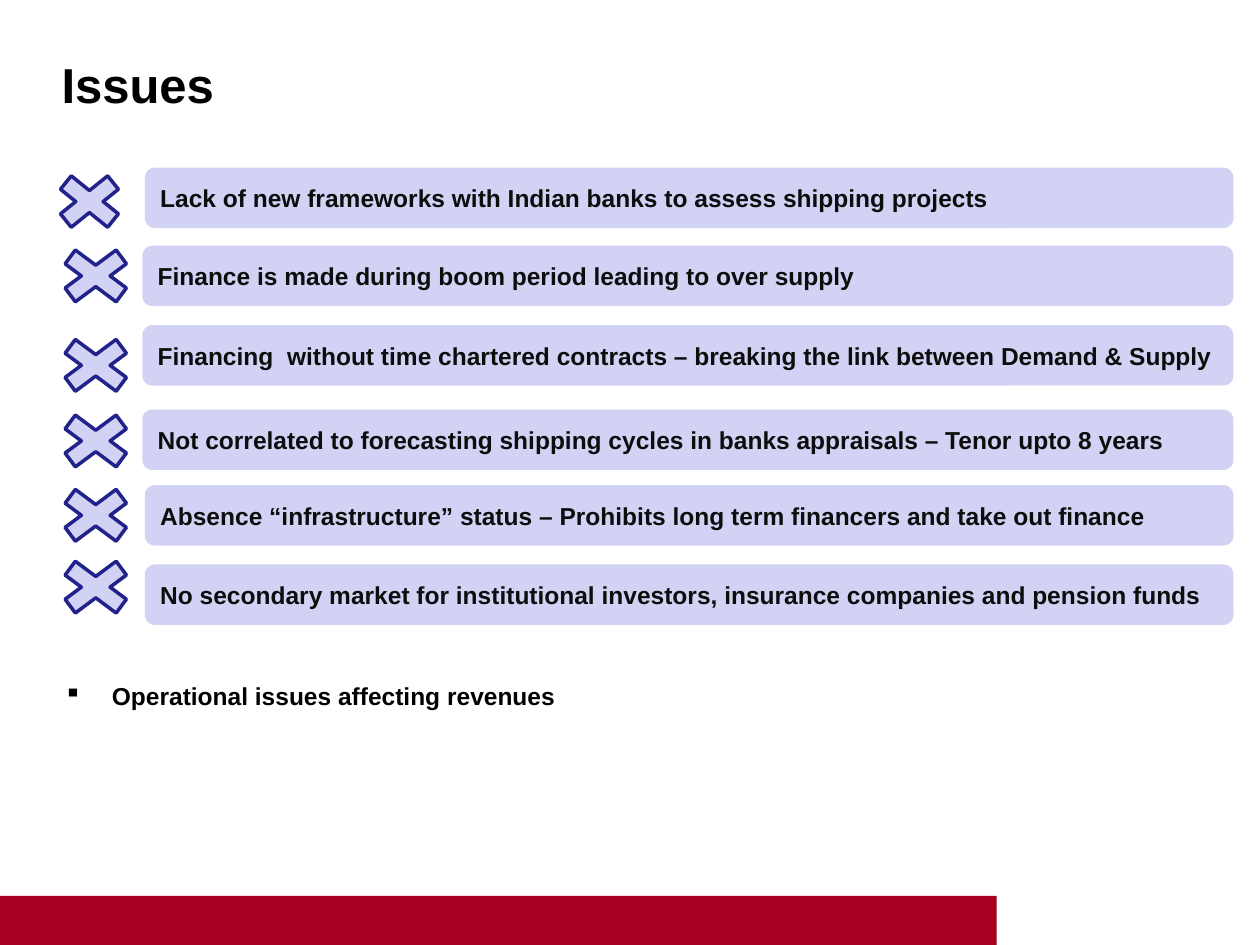
from lxml import etree
from pptx import Presentation
from pptx.dml.color import RGBColor
from pptx.enum.shapes import MSO_SHAPE as Kind
from pptx.enum.text import MSO_ANCHOR as Anchor, PP_ALIGN as Align
from pptx.oxml.ns import qn
from pptx.util import Inches, Pt

COLORS = {"band": "A50021", "bar": "D2D2F4", "edge": "22228B",
          "text": "0D0D0D", "black": "000000"}
TITLE = "Issues"
NOTE = "Operational issues affecting revenues"

# Text, bar left, bar top, cross top
ISSUES = [
    ("Lack of new frameworks with Indian banks to assess shipping projects",
     1.15, 1.33, 1.31),
    ("Finance is made during boom period leading to over supply",
     1.13, 1.95, 1.9),
    ("Financing  without time chartered contracts – breaking the link between Demand & Supply",
     1.13, 2.58, 2.61),
    ("Not correlated to forecasting shipping cycles in banks appraisals – Tenor upto 8 years",
     1.13, 3.25, 3.21),
    ("Absence “infrastructure” status – Prohibits long term financers and take out finance",
     1.15, 3.85, 3.8),
    ("No secondary market for institutional investors, insurance companies and pension funds",
     1.15, 4.48, 4.37),
]
RIGHT = 9.79  # shared right edge of the bars
BAR_H, CROSS_H = 0.48, 0.58


def color(name):
    return RGBColor.from_string(COLORS[name])


def add_shape(kind, box, fill, edge=None):
    shape = slide.shapes.add_shape(kind, *map(Inches, box))
    shape.shadow.inherit = False
    shape.fill.solid()
    shape.fill.fore_color.rgb = color(fill)
    if edge:
        shape.line.color.rgb = color(edge)
        shape.line.width = Pt(2)
    else:
        shape.line.fill.background()
    return shape


def write(shape, text, size, ink, anchor=Anchor.MIDDLE):
    frame = shape.text_frame
    frame.word_wrap = True
    frame.vertical_anchor = anchor
    para = frame.paragraphs[0]
    para.text = text
    para.alignment = Align.LEFT
    font = para.font
    font.name, font.size, font.bold = "Arial", Pt(size), True
    font.color.rgb = color(ink)
    return para


def add_bullet(para, char, indent):
    props = para._p.get_or_add_pPr()
    props.set("marL", str(Inches(indent)))
    props.set("indent", str(-Inches(indent)))
    mark = etree.Element(qn("a:buChar"), char=char)
    # Bullet goes after the line spacing and before the font
    props.find(qn("a:defRPr")).addprevious(mark)


deck = Presentation()
deck.slide_width, deck.slide_height = Inches(10), Inches(7.5)
slide = deck.slides.add_slide(deck.slide_layouts[6])

# Footer band
add_shape(Kind.RECTANGLE, (0, 7.11, 7.91, 0.39), "band")

# Note below the list
note = slide.shapes.add_textbox(*map(Inches, (0.41, 5.26, 9.04, 1.1)))
para = write(note, NOTE, 14, "black", Anchor.TOP)
para.line_spacing = 1.4
add_bullet(para, "▪", 0.38)

# Crosses and issue bars; the first cross is slightly smaller
for i, (text, left, top, cross) in enumerate(ISSUES):
    x, wide = (0.37, 0.78) if i else (0.35, 0.72)
    add_shape(Kind.MATH_MULTIPLY, (x, cross, wide, CROSS_H), "bar", "edge")
    bar = add_shape(Kind.ROUNDED_RECTANGLE,
                    (left, top, RIGHT - left, BAR_H), "bar")
    write(bar, text, 14, "text")

# Title
title = slide.shapes.add_textbox(*map(Inches, (0.39, 0.25, 9.17, 0.83)))
write(title, TITLE, 28, "black")

deck.save("out.pptx")
